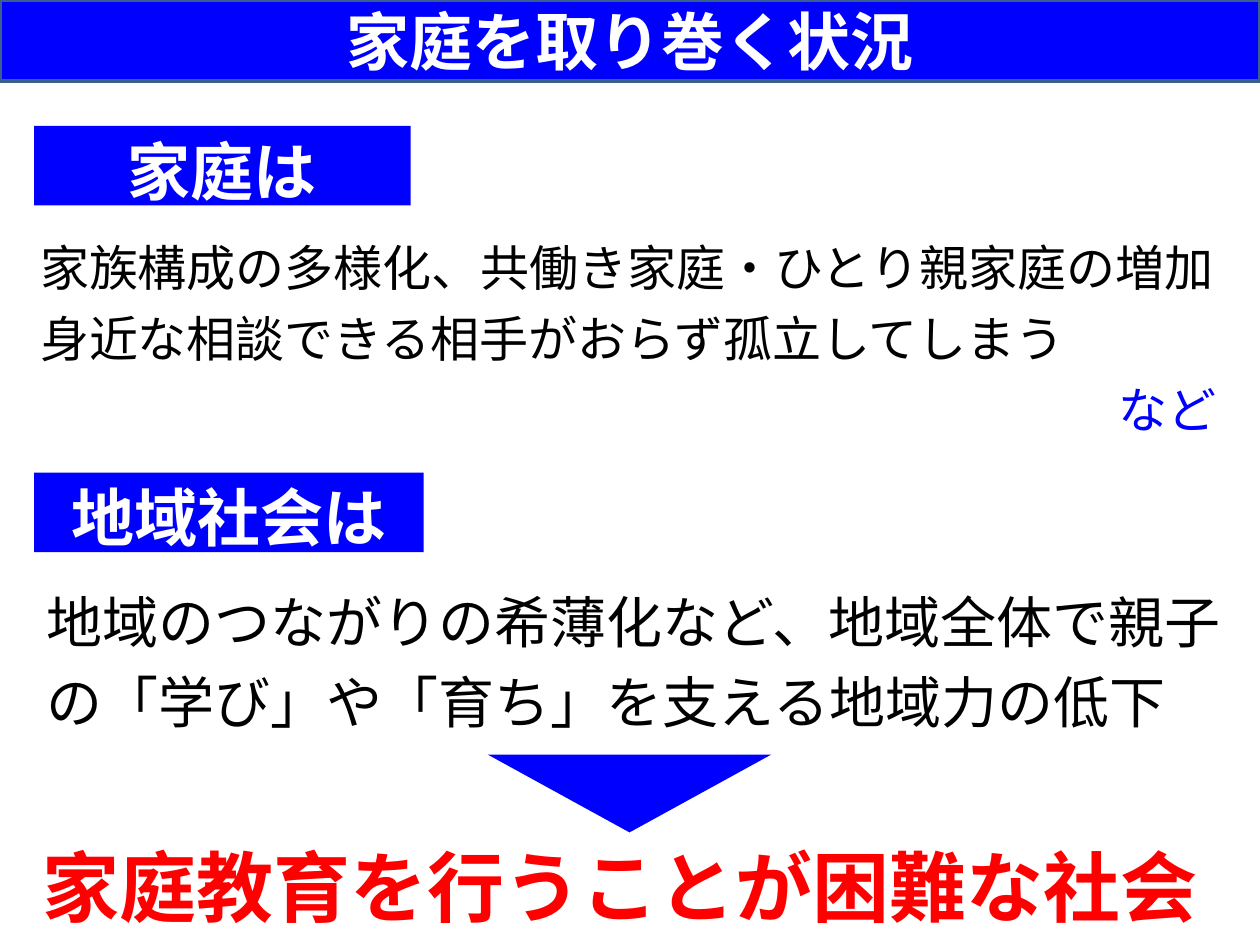
from lxml import etree
from pptx import Presentation
from pptx import util as u
from pptx.dml.color import RGBColor
from pptx.enum import shapes, text
from pptx.oxml.ns import qn

FONT = "Noto Sans CJK JP"
BLUE = RGBColor(0x00, 0x00, 0xFF)
OUTLINE = RGBColor(0x3A, 0x5F, 0x8C)
RED = RGBColor(0xFF, 0x00, 0x00)
WHITE = RGBColor(0xFF, 0xFF, 0xFF)
BLACK = RGBColor(0x00, 0x00, 0x00)
LEFT, CENTER, RIGHT = text.PP_ALIGN.LEFT, text.PP_ALIGN.CENTER, text.PP_ALIGN.RIGHT

# Boxes are left, top, width, height in centimetres.
TITLE = ("家庭を取り巻く状況", (0, 0, 25.4, 1.63))
LABELS = [
    ("家庭は", (0.69, 2.54, 7.59, 1.6)),
    ("地域社会は", (0.69, 9.53, 7.85, 1.6)),
]
# Each body has its box, its text size and lines of text, colour, alignment.
BODIES = [
    ((0.56, 4.65, 24.21, 4.09), 28, [
        ("家族構成の多様化、共働き家庭・ひとり親家庭の増加", BLACK, LEFT),
        ("身近な相談できる相手がおらず孤立してしまう", BLACK, LEFT),
        ("など", BLUE, RIGHT),
    ]),
    ((0.69, 11.2, 24.21, 3.99), 32, [
        ("地域のつながりの希薄化など、地域全体で親子", BLACK, LEFT),
        ("の「学び」や「育ち」を支える地域力の低下", BLACK, LEFT),
    ]),
]
ARROW_BOX = (9.83, 15.21, 5.72, 1.57)
CONCLUSION = ("家庭教育を行うことが困難な社会", (0.61, 16.79, 24.71, 2.13))


def lengths(box):
    return [u.Cm(value) for value in box]


def write(shape, lines, size, bold=False, spacing=None, wrap=True,
          anchor=text.MSO_ANCHOR.MIDDLE):
    frame = shape.text_frame
    frame.auto_size = text.MSO_AUTO_SIZE.NONE
    frame.word_wrap = wrap
    frame.vertical_anchor = anchor
    for index, (words, color, align) in enumerate(lines):
        paragraph = frame.add_paragraph() if index else frame.paragraphs[0]
        paragraph.alignment = align
        if spacing:
            paragraph.line_spacing = spacing
        run = paragraph.add_run()
        run.text = words
        run.font.size = u.Pt(size)
        run.font.bold = bold
        run.font.name = FONT
        run.font.color.rgb = color
        east_asian = etree.SubElement(run.font._element, qn("a:ea"))
        east_asian.set("typeface", FONT)


def add_blue_shape(slide, kind, box):
    shape = slide.shapes.add_shape(kind, *lengths(box))
    shape.shadow.inherit = False
    shape.fill.solid()
    shape.fill.fore_color.rgb = BLUE
    shape.line.fill.background()
    return shape


def main():
    presentation = Presentation()
    presentation.slide_width, presentation.slide_height = u.Cm(25.4), u.Cm(19.05)
    slide = presentation.slides.add_slide(presentation.slide_layouts[5])

    words, box = TITLE
    title = slide.shapes.title
    title.left, title.top, title.width, title.height = lengths(box)
    title.fill.solid()
    title.fill.fore_color.rgb = BLUE
    title.line.color.rgb = OUTLINE
    title.line.width = u.Pt(2)
    write(title, [(words, WHITE, CENTER)], 36, bold=True)

    for box, size, lines in BODIES:
        body = slide.shapes.add_textbox(*lengths(box))
        write(body, lines, size, spacing=1.2, wrap=False)

    for words, box in LABELS:
        label = add_blue_shape(slide, shapes.MSO_SHAPE.RECTANGLE, box)
        write(label, [(words, WHITE, CENTER)], 36, bold=True, spacing=u.Pt(48))

    arrow = add_blue_shape(slide, shapes.MSO_SHAPE.ISOSCELES_TRIANGLE, ARROW_BOX)
    arrow.rotation = 180

    words, box = CONCLUSION
    conclusion = slide.shapes.add_textbox(*lengths(box))
    write(conclusion, [(words, RED, LEFT)], 44, bold=True, anchor=text.MSO_ANCHOR.TOP)

    presentation.save("out.pptx")


if __name__ == "__main__":
    main()
